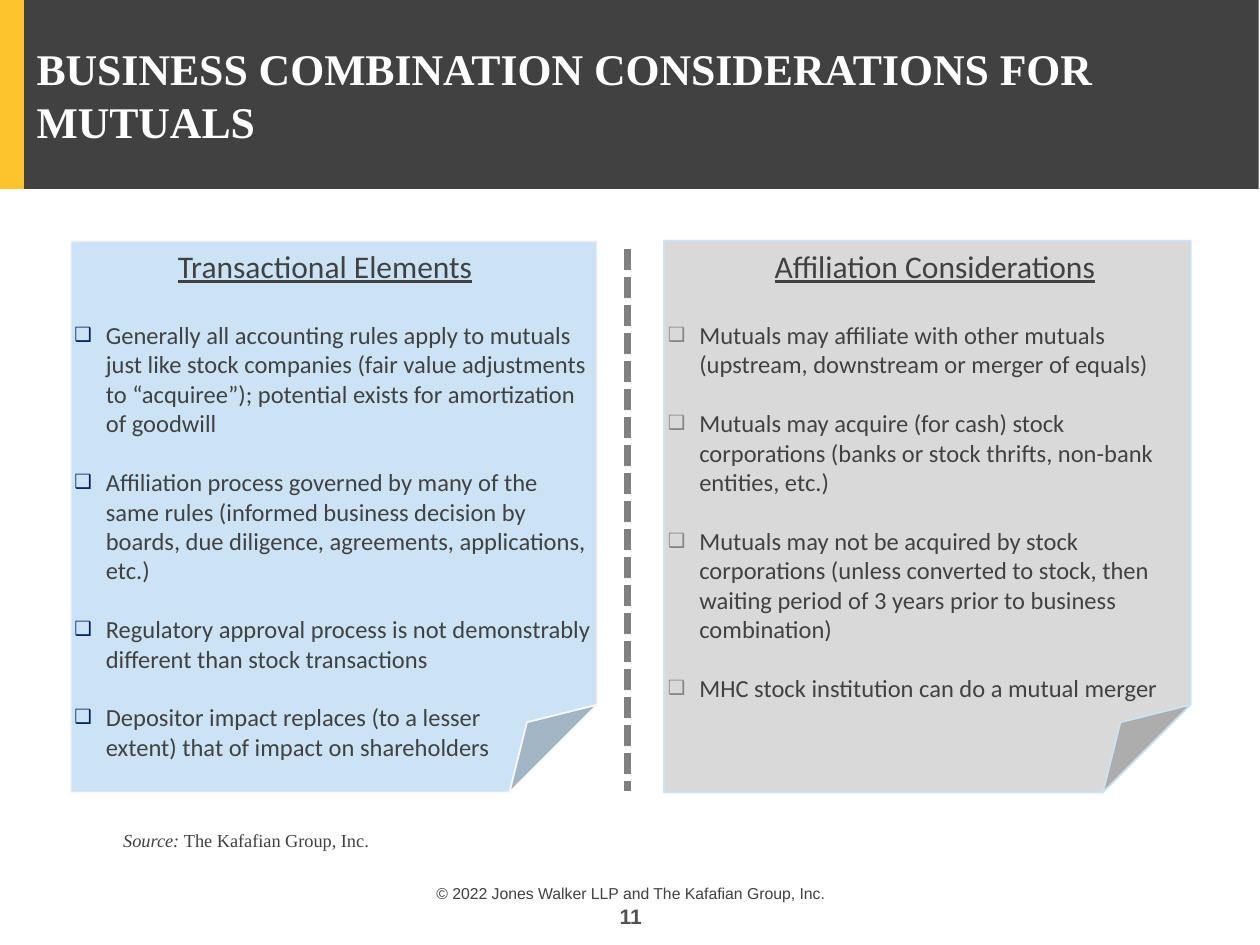
from lxml import etree
from pptx import Presentation
from pptx.dml.color import RGBColor as RGB
from pptx.enum.dml import MSO_LINE as Dash
from pptx.enum.shapes import MSO_CONNECTOR as Conn, MSO_SHAPE as Shape
from pptx.enum.text import MSO_ANCHOR as Anchor, MSO_AUTO_SIZE as Auto, PP_ALIGN as Align
from pptx.oxml.ns import qn
from pptx.util import Inches, Pt

# Content: each paragraph is a tuple of parts, "\v" is a line break
TITLE = "BUSINESS COMBINATION CONSIDERATIONS FOR MUTUALS"
SOURCE = ("Source: ", "The Kafafian Group, Inc.")
RIGHTS = "© 2022 Jones Walker LLP and The Kafafian Group, Inc."
PAGE = "11"
CARDS = [
    {"head": "Transactional Elements", "left": 0.56, "mid": 2.58,
     "fill": "blue", "edge": "pale", "mark": "navy",
     "items": [
         ("Generally all accounting rules apply to mutuals just like stock companies "
          "(fair value adjustments to “acquiree”); potential exists for amortization "
          "of goodwill",),
         ("Affiliation process governed by many of the same rules (informed business "
          "decision by boards, due diligence, agreements, applications, etc.)",),
         ("Regulatory approval process is not demonstrably different than stock "
          "transactions",),
         ("Depositor impact replaces (to a lesser", "\v",
          "extent) that of impact on shareholders"),
     ]},
    {"head": "Affiliation Considerations", "left": 5.27, "mid": 7.42,
     "fill": "gray", "edge": "blue", "mark": "mid",
     "items": [
         ("Mutuals may affiliate with other mutuals (upstream, downstream or merger "
          "of equals)",),
         ("Mutuals may acquire (for cash) stock corporations (banks or stock thrifts, "
          "non-bank entities, etc.)",),
         ("Mutuals may not be acquired by stock corporations (unless converted to "
          "stock, then waiting period of 3 years prior to business combination)",),
         ("MHC stock institution can do a mutual merger",),
     ]},
]
COLORS = {"gold": "FCC42A", "dark": "414141", "white": "FFFFFF", "blue": "CBE3F5",
          "pale": "F8F8F8", "gray": "D9D9D9", "navy": "002060", "mid": "848484",
          "rule": "808080", "page": "515151"}
SERIF, SANS, BODY = "Times New Roman", "Arial", "Calibri"
TOP, WIDE, HIGH = 1.91, 4.18, 4.38


def color(name):
    return RGB.from_string(COLORS[name])


def place(shape, *box):
    shape.left, shape.top, shape.width, shape.height = map(Inches, box)
    return shape


def paint(shape, fill, edge=None):
    shape.fill.solid()
    shape.fill.fore_color.rgb = color(fill)
    if edge:
        shape.line.color.rgb = color(edge)
        shape.line.width = Pt(1)
    else:
        shape.line.fill.background()


def bullet(para, tint):
    """Give a paragraph a hanging, tinted box mark."""
    props = para._p.get_or_add_pPr()
    props.set("marL", str(Inches(0.25)))
    props.set("indent", str(-Inches(0.25)))
    hue = etree.SubElement(props, qn("a:buClr"))
    etree.SubElement(hue, qn("a:srgbClr"), val=COLORS[tint])
    etree.SubElement(props, qn("a:buSzPct"), val="80000")
    etree.SubElement(props, qn("a:buChar"), char="❑")


def write(shape, paras, size, font, tint="dark", align=Align.LEFT, anchor=Anchor.TOP,
          bold=False, under=False, lead=False, mark=None, gap=0, inset=True):
    """Fill a shape with paragraphs; lead sets the first part in italics."""
    frame = shape.text_frame
    frame.word_wrap = True
    frame.auto_size = Auto.NONE
    frame.vertical_anchor = anchor
    side, edge = (0.1, 0.05) if inset else (0, 0)
    frame.margin_left = frame.margin_right = Inches(side)
    frame.margin_top = frame.margin_bottom = Inches(edge)
    for i, parts in enumerate(paras):
        para = frame.add_paragraph() if i else frame.paragraphs[0]
        para.alignment = align
        para.space_before = Pt(gap if i else 0)
        if mark:
            bullet(para, mark)
        for j, part in enumerate(parts):
            if part == "\v":
                para.add_line_break()
                continue
            run = para.add_run()
            run.text = part
            face = run.font
            face.name, face.size, face.bold = font, Pt(size), bold
            face.underline, face.italic = under, lead and j == 0
            face.color.rgb = color(tint)


deck = Presentation()
deck.slide_width, deck.slide_height = Inches(10), Inches(7.5)
slide = deck.slides.add_slide(deck.slide_layouts[3])
shapes = slide.shapes
title, *lists = slide.placeholders


def label(box, paras, *args, **kind):
    write(place(shapes.add_textbox(0, 0, 0, 0), *box), paras, *args, **kind)


# Title band
bar = shapes.add_shape(Shape.RECTANGLE, 0, 0, Inches(0.19), Inches(1.5))
bar.shadow.inherit = False
paint(bar, "gold")
paint(place(title, 0.19, 0, 9.8, 1.5), "dark")
write(title, [(TITLE,)], 25, SERIF, "white", anchor=Anchor.MIDDLE, bold=True)

# Two note cards, each with a heading and a list
for card, body in zip(CARDS, lists):
    left = card["left"]
    note = shapes.add_shape(Shape.FOLDED_CORNER, Inches(left), Inches(TOP),
                            Inches(WIDE), Inches(HIGH))
    note.shadow.inherit = False
    paint(note, card["fill"], card["edge"])
    label((card["mid"] - 2, TOP, 4, 0.4), [(card["head"],)], 18, BODY,
          align=Align.CENTER, under=True)
    place(body, left - 0.07, 2.49, 4.3, 3.75)
    write(body, card["items"], 14, BODY, mark=card["mark"], gap=16.8)
    note._element.addnext(body._element)  # list goes in front of its card

# Dashed divider
rule = shapes.add_connector(Conn.STRAIGHT, Inches(4.98), Inches(1.98),
                            Inches(4.98), Inches(6.28))
rule.line.color.rgb = color("rule")
rule.line.width = Pt(4)
rule.line.dash_style = Dash.SQUARE_DOT
etree.SubElement(rule._element.spPr, qn("a:effectLst"))

# Source and footer
label((0.88, 6.53, 4.46, 0.28), [SOURCE], 10.5, SERIF, lead=True)
label((3.4, 7.01, 3.21, 0.15), [(RIGHTS,)], 9, SANS, align=Align.CENTER, inset=False)
label((3.88, 7, 2.25, 0.37), [(PAGE,)], 12, SANS, "page", align=Align.CENTER,
      anchor=Anchor.BOTTOM, bold=True, inset=False)

deck.save("out.pptx")
